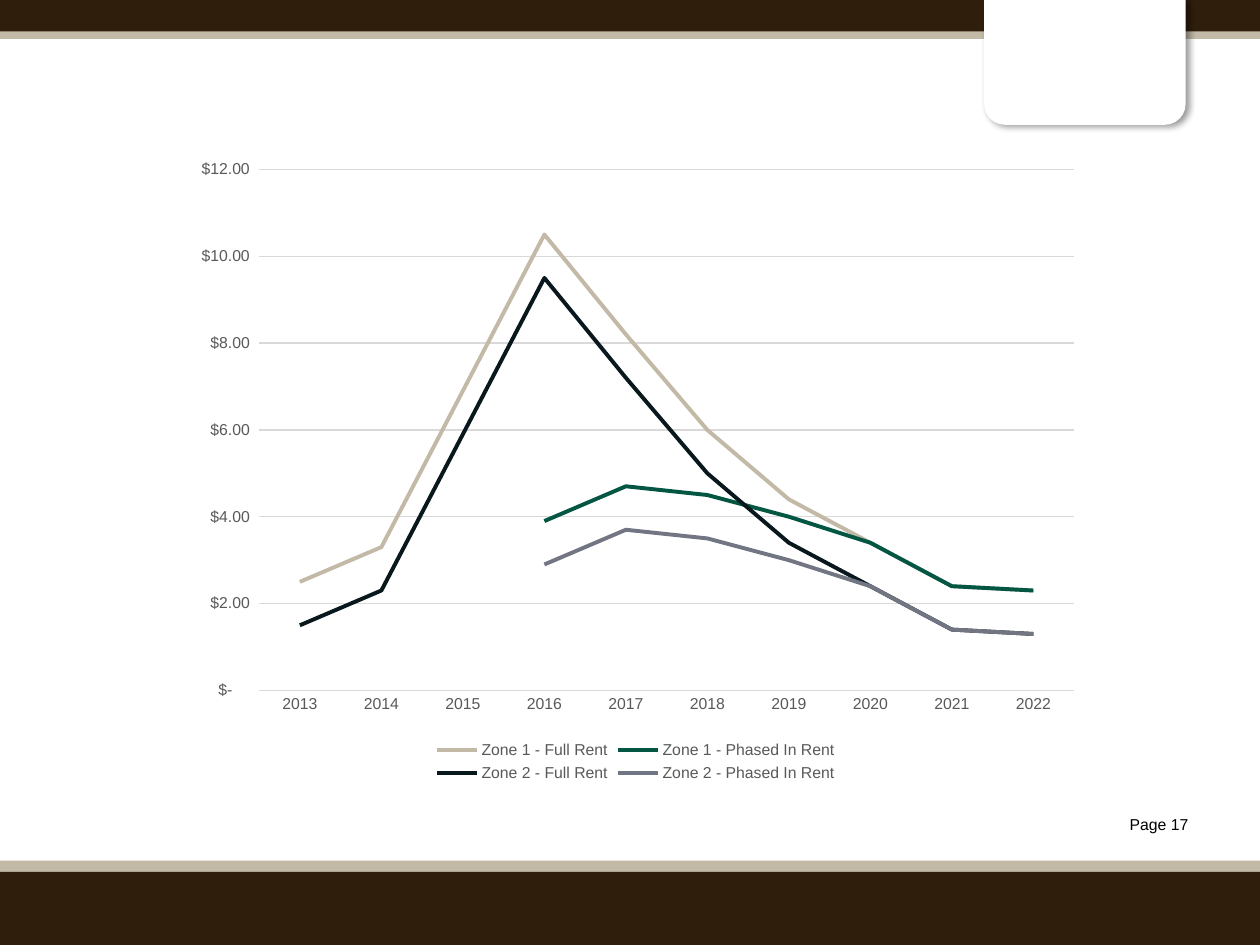
from dataclasses import dataclass
from lxml.etree import SubElement
from pptx import Presentation
from pptx.chart.data import CategoryChartData
from pptx.dml.color import RGBColor
from pptx.enum.chart import XL_CHART_TYPE, XL_LEGEND_POSITION, XL_TICK_MARK
from pptx.enum.shapes import MSO_SHAPE
from pptx.enum.text import PP_ALIGN
from pptx.oxml.ns import qn
from pptx.util import Inches, Pt


@dataclass(frozen=True)
class Theme:
    font: str = "Arial"
    size: float = 9
    brown: str = "2F1E0C"
    sand: str = "C2B9A6"
    white: str = "FFFFFF"
    black: str = "000000"
    grey: str = "595959"
    grid: str = "D9D9D9"
    green: str = "035642"
    ink: str = "08181D"
    slate: str = "727683"
    grid_width: float = 0.75
    series_width: float = 2.25


THEME = Theme()
YEARS = [str(year) for year in range(2013, 2023)]
CURRENCY = '_("$"* #,##0.00_);_("$"* \\(#,##0.00\\);_("$"* "-"??_);_(@_)'
RENTS = [
    ("Zone 1 - Full Rent", THEME.sand,
     [2.5, 3.3, 6.9, 10.5, 8.2, 6, 4.4, 3.4, 2.4, 2.3]),
    ("Zone 1 - Phased In Rent", THEME.green,
     [None] * 3 + [3.9, 4.7, 4.5, 4, 3.4, 2.4, 2.3]),
    ("Zone 2 - Full Rent", THEME.ink,
     [1.5, 2.3, 5.9, 9.5, 7.2, 5, 3.4, 2.4, 1.4, 1.3]),
    ("Zone 2 - Phased In Rent", THEME.slate,
     [None] * 3 + [2.9, 3.7, 3.5, 3, 2.4, 1.4, 1.3]),
]


class SlideBuilder:
    def __init__(self, slide, theme):
        self.slide = slide
        self.theme = theme

    def format_font(self, font, color):
        font.name = self.theme.font
        font.size = Pt(self.theme.size)
        font.color.rgb = RGBColor.from_string(color)

    def format_line(self, line, color, width):
        line.color.rgb = RGBColor.from_string(color)
        line.width = Pt(width)

    def shape(self, kind, box, color):
        sp = self.slide.shapes.add_shape(kind, *map(Inches, box))
        sp.shadow.inherit = False
        sp.fill.solid()
        sp.fill.fore_color.rgb = RGBColor.from_string(color)
        sp.line.fill.background()
        return sp

    def band(self, top, height, color):
        return self.shape(MSO_SHAPE.RECTANGLE, (0, top, 10, height), color)

    def tab(self, box):
        """Draw a hanging tab, rounded at the bottom, with a soft shadow."""
        sp = self.shape(MSO_SHAPE.ROUND_2_SAME_RECTANGLE, box, self.theme.white)
        sp.rotation = 180
        effects = sp._element.spPr.find(qn("a:effectLst"))
        shadow = SubElement(effects, qn("a:outerShdw"), blurRad=str(Pt(4)),
                            dist=str(Pt(2.24)), dir="1594000", rotWithShape="0")
        color = SubElement(shadow, qn("a:srgbClr"), val=self.theme.black)
        SubElement(color, qn("a:alpha"), val="40000")

    def text(self, text, box, *, color, align=PP_ALIGN.LEFT):
        tf = self.slide.shapes.add_textbox(*map(Inches, box)).text_frame
        tf.word_wrap = True
        p = tf.paragraphs[0]
        p.alignment = align
        r = p.add_run()
        r.text = text
        self.format_font(r.font, color)

    def line_chart(self, box, categories, series, number_format):
        theme = self.theme
        data = CategoryChartData()
        data.categories = categories
        for name, _, values in series:
            data.add_series(name, values)
        chart = self.slide.shapes.add_chart(
            XL_CHART_TYPE.LINE, *map(Inches, box), data).chart
        chart.has_title = False
        self.format_font(chart.font, theme.grey)
        chart.plots[0].vary_by_categories = False
        for line, (_, color, _) in zip(chart.plots[0].series, series):
            line.smooth = False
            self.format_line(line.format.line, color, theme.series_width)

        for axis in (chart.category_axis, chart.value_axis):
            axis.major_tick_mark = axis.minor_tick_mark = XL_TICK_MARK.NONE
            self.format_font(axis.tick_labels.font, theme.grey)
        self.format_line(chart.category_axis.format.line, theme.grid, theme.grid_width)

        rent = chart.value_axis
        rent.minimum_scale, rent.maximum_scale, rent.major_unit = 0, 12, 2
        rent.format.line.fill.background()
        self.format_line(rent.major_gridlines.format.line, theme.grid, theme.grid_width)
        rent.tick_labels.number_format = number_format
        rent.tick_labels.number_format_is_linked = False

        chart.has_legend = True
        chart.legend.position = XL_LEGEND_POSITION.BOTTOM
        chart.legend.include_in_layout = False
        self.format_font(chart.legend.font, theme.grey)


def main():
    prs = Presentation()
    prs.slide_width, prs.slide_height = Inches(10), Inches(7.5)
    s = SlideBuilder(prs.slides.add_slide(prs.slide_layouts[6]), THEME)

    s.band(6.83, 0.17, THEME.sand)
    s.band(6.92, 0.58, THEME.brown)
    s.band(0.23, 0.08, THEME.sand)
    s.band(0, 0.25, THEME.brown)
    s.tab((7.81, 0, 1.6, 0.99))
    s.text("Page 17", (8.45, 6.42, 1.08, 0.25), color=THEME.black,
           align=PP_ALIGN.RIGHT)
    s.line_chart((1.42, 1.17, 7.25, 5.08), YEARS, RENTS, CURRENCY)

    prs.save("out.pptx")


if __name__ == "__main__":
    main()
